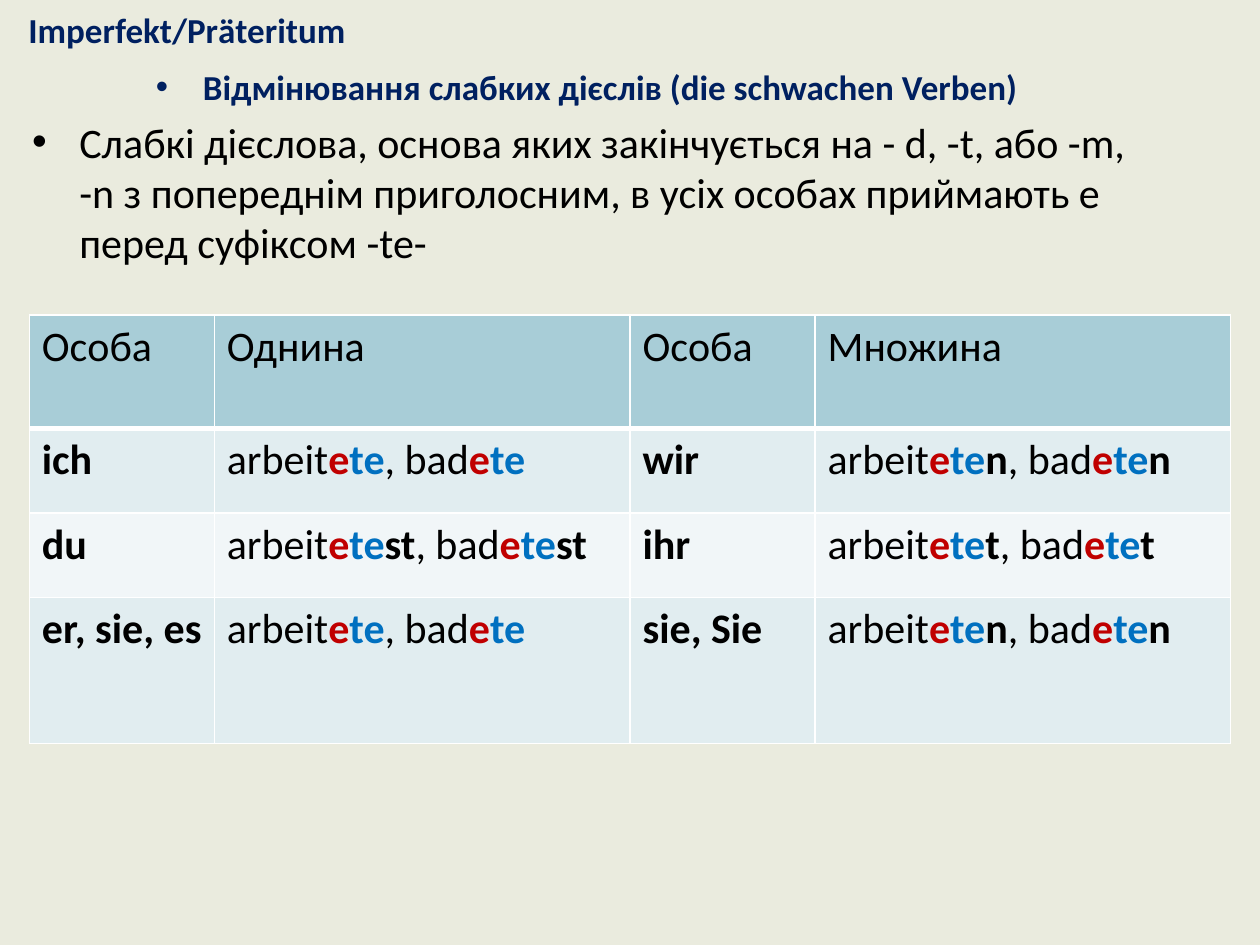
import pptx
import pptx.util
import pptx.dml.color
import pptx.enum.text
import pptx.oxml
import pptx.oxml.ns
from lxml import etree

Cm, Pt = pptx.util.Cm, pptx.util.Pt
RGBColor = pptx.dml.color.RGBColor
PP_ALIGN = pptx.enum.text.PP_ALIGN
MSO_ANCHOR = pptx.enum.text.MSO_ANCHOR
qn = pptx.oxml.ns.qn

BACKGROUND = RGBColor(0xEA, 0xEB, 0xDE)
NAVY = RGBColor(0x00, 0x20, 0x60)
BLACK = RGBColor(0x00, 0x00, 0x00)
RED = RGBColor(0xC0, 0x00, 0x00)
BLUE = RGBColor(0x00, 0x70, 0xC0)
WHITE = RGBColor(0xFF, 0xFF, 0xFF)
HEADER_FILL = RGBColor(0xA8, 0xCD, 0xD7)
BAND_FILLS = [RGBColor(0xE1, 0xED, 0xF0), RGBColor(0xF1, 0xF6, 0xF8)]

FONT = "Calibri"
STEMS = ["arbeit", "bad"]
HEADERS = ["Особа", "Однина", "Особа", "Множина"]
# Singular pronoun, its ending, plural pronoun, its ending
CONJUGATION = [
    ("ich", "", "wir", "n"),
    ("du", "st", "ihr", "t"),
    ("er, sie, es", "", "sie, Sie", "n"),
]
COLUMN_WIDTHS = [Cm(3.73), Cm(8.38)] * 2
ROW_HEIGHTS = [Cm(2.29), Cm(1.7), Cm(1.7), Cm(2.95)]


def set_font(font, size, color, bold):
    font.name = FONT
    font.size = Pt(size)
    font.color.rgb = color
    font.bold = bold


def add_title(slide, left, top, width, height):
    title = slide.shapes.title
    title.left, title.top, title.width, title.height = left, top, width, height
    frame = title.text_frame
    frame.text = "Imperfekt/Prӓteritum"
    frame.auto_size = pptx.enum.text.MSO_AUTO_SIZE.NONE
    frame.vertical_anchor = MSO_ANCHOR.MIDDLE
    paragraph = frame.paragraphs[0]
    paragraph.alignment = PP_ALIGN.CENTER
    set_font(paragraph.font, 20, NAVY, True)


def add_bullet(paragraph, text, size, color, bold, alignment):
    paragraph.text = text
    paragraph.alignment = alignment
    paragraph.space_before = Pt(size * 0.2)
    set_font(paragraph.font, size, color, bold)
    properties = paragraph._p.get_or_add_pPr()
    properties.set("marL", str(Cm(0.95)))
    properties.set("indent", str(-Cm(0.95)))
    bullet_font = etree.Element(qn("a:buFont"), typeface="Arial")
    bullet = etree.Element(qn("a:buChar"), char="•")
    # Bullets belong right after the paragraph spacing
    properties.find(qn("a:spcBef")).addnext(bullet_font)
    bullet_font.addnext(bullet)


def add_rule(slide, left, top, width, height):
    frame = slide.shapes.add_textbox(left, top, width, height).text_frame
    frame.word_wrap = True
    add_bullet(frame.paragraphs[0],
               "Відмінювання слабких дієслів (die schwachen Verben)",
               20, NAVY, True, PP_ALIGN.CENTER)
    add_bullet(frame.add_paragraph(),
               "Слабкі дієслова, основа яких закінчується на - d, -t, або -m, -n "
               "з попереднім приголосним, в усіх особах приймають е "
               "перед суфіксом -te-",
               24, BLACK, False, PP_ALIGN.LEFT)


def style_cell(cell, fill, top_width, bottom_width):
    cell.fill.solid()
    cell.fill.fore_color.rgb = fill
    properties = cell._tc.get_or_add_tcPr()
    borders = [("L", 1), ("R", 1), ("T", top_width), ("B", bottom_width)]
    for position, (side, width) in enumerate(borders):
        line = etree.Element(qn(f"a:ln{side}"), w=str(Pt(width)))
        solid = etree.SubElement(line, qn("a:solidFill"))
        etree.SubElement(solid, qn("a:srgbClr"), val=str(WHITE))
        properties.insert(position, line)


def write_text(cell, text, bold):
    cell.text = text
    set_font(cell.text_frame.paragraphs[0].font, 24, BLACK, bold)


def write_verbs(cell, ending):
    paragraph = cell.text_frame.paragraphs[0]
    for index, stem in enumerate(STEMS):
        parts = [(", " * (index > 0) + stem, BLACK, False),
                 ("e", RED, True), ("te", BLUE, True), (ending, BLACK, True)]
        for text, color, bold in parts:
            if text:
                run = paragraph.add_run()
                run.text = text
                set_font(run.font, 24, color, bold)


def add_conjugation_table(slide, left, top):
    table = slide.shapes.add_table(
        len(ROW_HEIGHTS), len(COLUMN_WIDTHS), left, top,
        sum(COLUMN_WIDTHS), sum(ROW_HEIGHTS)).table
    for column, width in zip(table.columns, COLUMN_WIDTHS):
        column.width = width
    for row, height in zip(table.rows, ROW_HEIGHTS):
        row.height = height

    # Header row
    for cell, header in zip(table.rows[0].cells, HEADERS):
        write_text(cell, header, False)
        style_cell(cell, HEADER_FILL, 1, 3)

    # Pronouns and verb forms
    for index, entries in enumerate(CONJUGATION):
        for column, entry in enumerate(entries):
            cell = table.cell(index + 1, column)
            if column % 2 == 0:
                write_text(cell, entry, True)
            else:
                write_verbs(cell, entry)
            style_cell(cell, BAND_FILLS[index % 2], 3 if index == 0 else 1, 1)


def main():
    presentation = pptx.Presentation()
    presentation.slide_width = Cm(25.4)
    presentation.slide_height = Cm(19.05)
    slide = presentation.slides.add_slide(presentation.slide_layouts[5])
    slide.background.fill.solid()
    slide.background.fill.fore_color.rgb = BACKGROUND

    add_rule(slide, Cm(0.4), Cm(1.2), Cm(22.86), Cm(12.57))
    add_conjugation_table(slide, Cm(0.59), Cm(6.35))
    add_title(slide, Cm(0), Cm(0), Cm(7.54), Cm(1.2))
    presentation.save("out.pptx")


if __name__ == "__main__":
    main()
